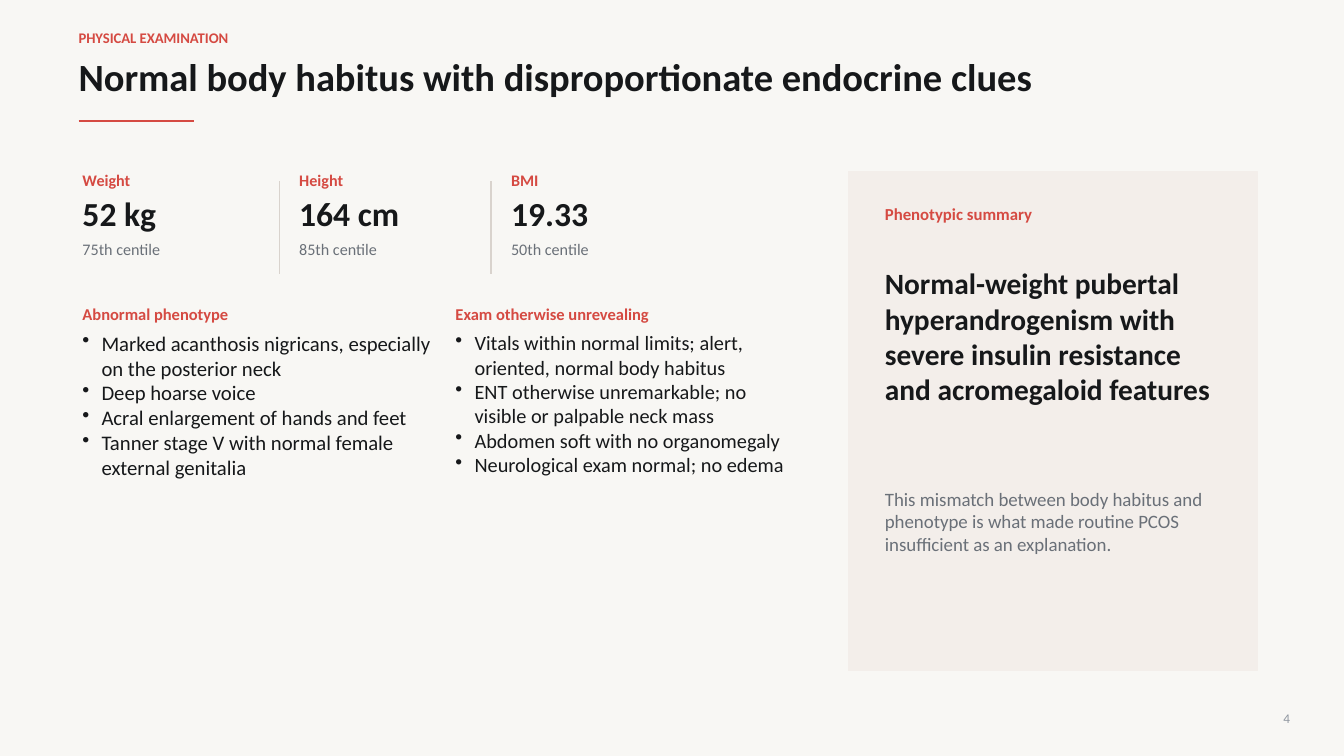
"""Build the physical examination slide and save it as out.pptx."""
from lxml import etree
from pptx import Presentation
from pptx.dml.color import RGBColor
from pptx.enum.shapes import MSO_CONNECTOR, MSO_SHAPE
from pptx.enum.text import MSO_ANCHOR, PP_ALIGN
from pptx.oxml.ns import qn
from pptx.util import Cm, Pt

STRAIGHT = MSO_CONNECTOR.STRAIGHT
RECTANGLE = MSO_SHAPE.RECTANGLE
TOP, MIDDLE = MSO_ANCHOR.TOP, MSO_ANCHOR.MIDDLE
LEFT, RIGHT = PP_ALIGN.LEFT, PP_ALIGN.RIGHT
RED, INK, GREY = "D54A42", "16181A", "6A7078"
PANEL, DIVIDER, PAGE_GREY = "F3EEEA", "D9D3CD", "8F969F"
BULLET_INDENT = Cm(0.48)


def color(value):
    return RGBColor.from_string(value)


def add_text(left, top, width, height, lines, size, ink, bold=False, align=LEFT, bullets=False):
    box = page.shapes.add_textbox(Cm(left), Cm(top), Cm(width), Cm(height))
    frame = box.text_frame
    frame.word_wrap = True
    frame.margin_left = frame.margin_top = frame.margin_right = frame.margin_bottom = 0
    frame.vertical_anchor = TOP if bullets else MIDDLE
    for index, line in enumerate(lines):
        para = frame.add_paragraph() if index else frame.paragraphs[0]
        para.alignment = align
        if bullets:
            properties = para._p.get_or_add_pPr()
            properties.set("marL", str(BULLET_INDENT))
            properties.set("indent", str(-BULLET_INDENT))
            etree.SubElement(properties, qn("a:buChar"), char="•")
        span = para.add_run()
        span.text = line
        span.font.name = "Calibri"
        span.font.size = Pt(size)
        span.font.bold = bold
        span.font.color.rgb = color(ink)


deck = Presentation()
deck.slide_width, deck.slide_height = Cm(33.87), Cm(19.05)
page = deck.slides.add_slide(deck.slide_layouts[6])
page.background.fill.solid()
page.background.fill.fore_color.rgb = color("F8F7F4")

add_text(1.98, 0.71, 8.13, 0.46, ["PHYSICAL EXAMINATION"], 10.5, RED, bold=True)
add_text(1.98, 1.32, 24.31, 1.22,
         ["Normal body habitus with disproportionate endocrine clues"], 27.5, INK, bold=True)

rules = [
    (1.98, 3.05, 4.9, 3.05, RED, 1.6),
    (7.04, 4.57, 7.04, 6.91, DIVIDER, 1),
    (12.37, 4.57, 12.37, 6.91, DIVIDER, 1),
]
for start_x, start_y, end_x, end_y, ink, weight in rules:
    rule = page.shapes.add_connector(STRAIGHT, Cm(start_x), Cm(start_y), Cm(end_x), Cm(end_y))
    rule.line.color.rgb = color(ink)
    rule.line.width = Pt(weight)
    etree.SubElement(rule._element.spPr, qn("a:effectLst"))

metrics = [
    (2.08, "Weight", "52 kg", "75th centile"),
    (7.54, "Height", "164 cm", "85th centile"),
    (12.88, "BMI", "19.33", "50th centile"),
]
for left, label, value, centile in metrics:
    add_text(left, 4.32, 4.32, 0.41, [label], 11.5, RED, bold=True)
    add_text(left, 4.93, 4.32, 0.86, [value], 24, INK, bold=True)
    add_text(left, 5.89, 4.32, 0.76, [centile], 11.5, GREY)

findings = [
    (2.08, 9.02, 14.8, "Abnormal phenotype", [
        "Marked acanthosis nigricans, especially on the posterior neck",
        "Deep hoarse voice",
        "Acral enlargement of hands and feet",
        "Tanner stage V with normal female external genitalia",
    ]),
    (11.48, 8.64, 14.5, "Exam otherwise unrevealing", [
        "Vitals within normal limits; alert, oriented, normal body habitus",
        "ENT otherwise unremarkable; no visible or palpable neck mass",
        "Abdomen soft with no organomegaly",
        "Neurological exam normal; no edema",
    ]),
]
for left, width, size, heading, items in findings:
    add_text(left, 7.62, width, 0.56, [heading], 11.8, RED, bold=True)
    add_text(left, 8.33, width, 5.59, items, size, INK, bullets=True)

panel = page.shapes.add_shape(RECTANGLE, Cm(21.39), Cm(4.32), Cm(10.29), Cm(12.57))
panel.shadow.inherit = False
panel.fill.solid()
panel.fill.fore_color.rgb = color(PANEL)
panel.line.color.rgb = color(PANEL)
panel.line.width = Pt(1)

add_text(22.3, 5.13, 5.33, 0.51, ["Phenotypic summary"], 12, RED, bold=True)
add_text(22.3, 6.05, 8.51, 4.83,
         ["Normal-weight pubertal hyperandrogenism with severe insulin resistance "
          "and acromegaloid features"], 21, INK, bold=True)
add_text(22.3, 11.99, 8.13, 2.29,
         ["This mismatch between body habitus and phenotype is what made routine PCOS "
          "insufficient as an explanation."], 13.5, GREY)
add_text(31.62, 17.86, 0.89, 0.46, ["4"], 9.5, PAGE_GREY, align=RIGHT)

deck.save("out.pptx")
